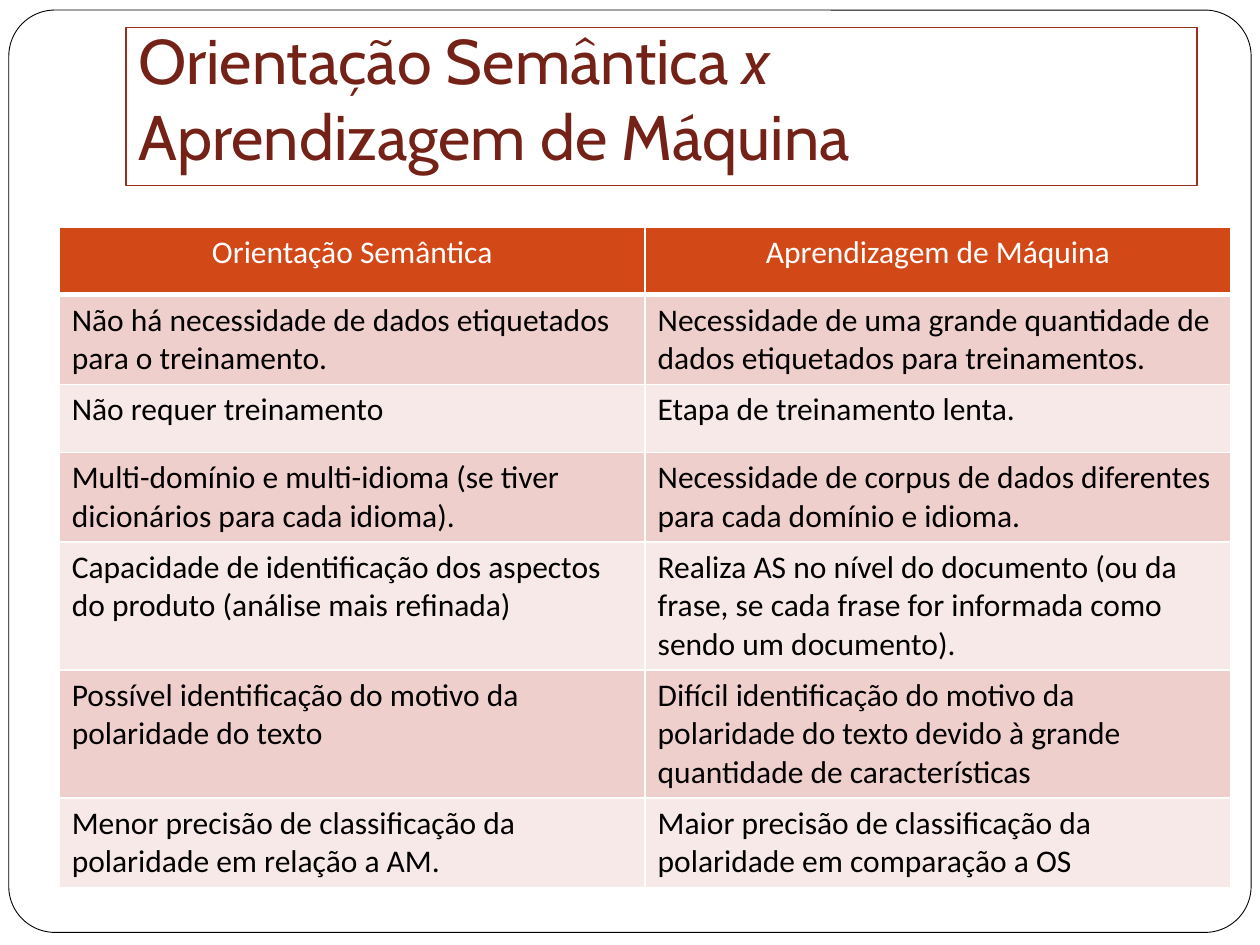
"""Build a slide comparing semantic orientation with machine learning."""
from lxml import etree
from pptx import Presentation
from pptx import util as u
from pptx.dml.color import RGBColor
from pptx.enum import shapes, text
from pptx.oxml import ns


def color(value):
    return RGBColor.from_string(value)


def add_border(cell, side, points):
    properties = cell._tc.get_or_add_tcPr()
    line = etree.SubElement(properties, ns.qn(f"a:ln{side}"), w=str(u.Pt(points)))
    fill = etree.SubElement(line, ns.qn("a:solidFill"))
    etree.SubElement(fill, ns.qn("a:srgbClr"), val="FFFFFF")


presentation = Presentation()
presentation.slide_width = u.Inches(10)
presentation.slide_height = u.Inches(7.5)
slide = presentation.slides.add_slide(presentation.slide_layouts[6])

frame = slide.shapes.add_shape(
    shapes.MSO_SHAPE.ROUNDED_RECTANGLE,
    u.Inches(0.07), u.Inches(0.08), u.Inches(9.86), u.Inches(7.32))
frame.adjustments[0] = 0.05
frame.shadow.inherit = False
frame.fill.solid()
frame.fill.fore_color.rgb = color("FFFFFF")
frame.line.color.rgb = color("000000")
frame.line.width = u.Pt(0.5)

title = slide.shapes.add_textbox(
    u.Inches(1), u.Inches(0.22), u.Inches(8.5), u.Inches(1.25))
title.line.color.rgb = color("9B2D1F")
title.line.width = u.Pt(0.75)
title_format = {
    "word_wrap": True,
    "auto_size": text.MSO_AUTO_SIZE.NONE,
    "vertical_anchor": text.MSO_ANCHOR.BOTTOM,
    "margin_bottom": u.Inches(0.1),
}
for name, value in title_format.items():
    setattr(title.text_frame, name, value)
paragraph = title.text_frame.paragraphs[0]
paragraph.font.size = u.Pt(36)
for words, italic in [("Orientação Semântica ", False), ("x ", True),
                      ("\n", False), ("Aprendizagem de Máquina", False)]:
    if words == "\n":
        paragraph.add_line_break()
        continue
    run = paragraph.add_run()
    run.text = words
    run.font.color.rgb = color("742217")
    for name, value in {"name": "Cabin", "size": u.Pt(36), "italic": italic}.items():
        setattr(run.font, name, value)

rows = [
    ("Orientação Semântica", "Aprendizagem de Máquina"),
    ("Não há necessidade de dados etiquetados para o treinamento.",
     "Necessidade de uma grande quantidade de dados etiquetados para treinamentos."),
    ("Não requer treinamento", "Etapa de treinamento lenta."),
    ("Multi-domínio e multi-idioma (se tiver dicionários para cada idioma).",
     "Necessidade de corpus de dados diferentes para cada domínio e idioma."),
    ("Capacidade de identificação dos aspectos do produto (análise mais refinada)",
     "Realiza AS no nível do documento (ou da frase, se cada frase for informada "
     "como sendo um documento)."),
    ("Possível identificação do motivo da polaridade do texto",
     "Difícil identificação do motivo da polaridade do texto devido à grande "
     "quantidade de características"),
    ("Menor precisão de classificação da polaridade em relação a AM.",
     "Maior precisão de classificação da polaridade em comparação a OS"),
]
row_height = u.Inches(0.54)
table = slide.shapes.add_table(
    len(rows), 2, u.Inches(0.47), u.Inches(1.8),
    u.Inches(9.3), row_height * len(rows)).table
for row_index, row in enumerate(rows):
    header = row_index == 0
    table.rows[row_index].height = row_height
    for column_index, words in enumerate(row):
        cell = table.cell(row_index, column_index)
        for side in "LRTB":
            add_border(cell, side, 3 if header and side == "B" else 1)
        cell.fill.solid()
        band = "EFCFCC" if row_index % 2 else "F7E9E8"
        cell.fill.fore_color.rgb = color("D34817" if header else band)
        cell.text = words
        paragraph = cell.text_frame.paragraphs[0]
        paragraph.alignment = text.PP_ALIGN.CENTER if header else text.PP_ALIGN.LEFT
        font = paragraph.runs[0].font
        font.color.rgb = color("FFFFFF" if header else "000000")
        for name, value in {"name": "Calibri", "size": u.Pt(18), "bold": False}.items():
            setattr(font, name, value)

presentation.save("out.pptx")
